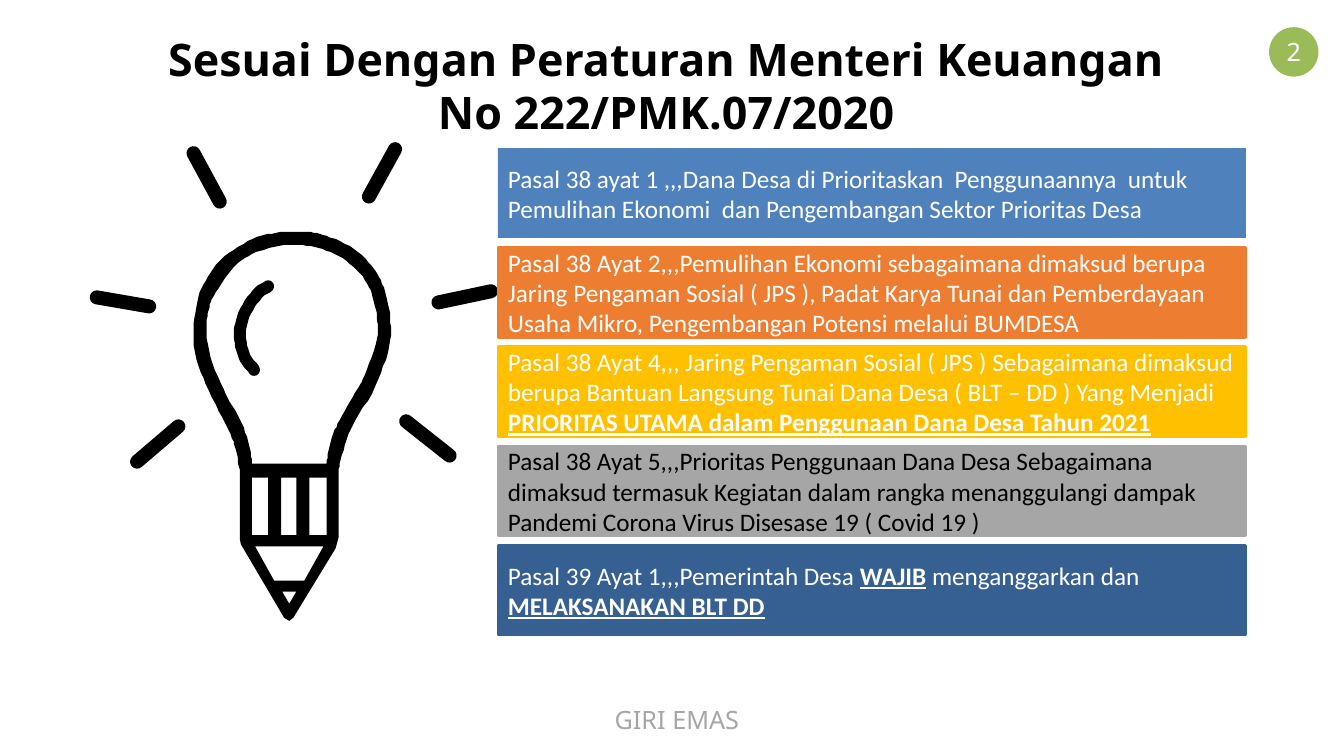
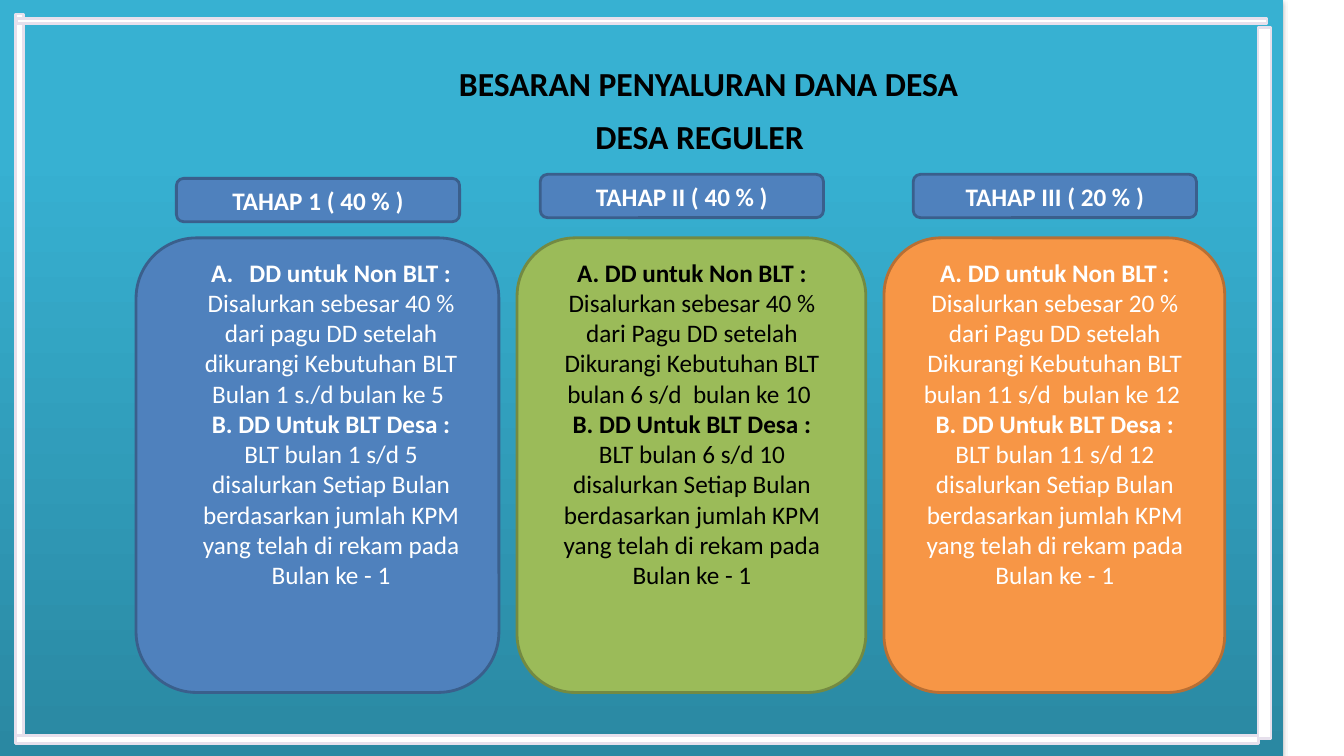
from dataclasses import dataclass

from lxml import etree
from pptx import Presentation
from pptx import util as u
from pptx.dml.color import RGBColor
from pptx.enum import shapes, text
from pptx.oxml import ns

# Shared grid: 160 columns by 90 rows of square cells
CELL = 12192000 / 160
COLUMNS, ROWS = 160, 90
DRAWING_UNIT = 9144  # the bulb is drawn in hundredths of an inch

# Shared fonts and colours
BODY_FONT, HEAD_FONT = "Calibri", "Noto Sans"
WHITE, BLACK, GREY = "FFFFFF", "000000", "A6A6A6"
BLUE, BLUE_EDGE, GREEN = "4F81BD", "3A5F8C", "9BBB59"


@dataclass(frozen=True)
class Area:
    column: float
    row: float
    columns: float
    rows: float


@dataclass(frozen=True)
class Span:
    text: str
    bold: bool = False
    underline: bool = False


@dataclass(frozen=True)
class Style:
    size: float = 18
    font: str = BODY_FONT
    colour: str = WHITE
    align: text.PP_ALIGN = text.PP_ALIGN.CENTER
    anchor: text.MSO_ANCHOR = text.MSO_ANCHOR.TOP
    wrap: bool = True


@dataclass(frozen=True)
class Article:
    fill: str
    edge: str | None
    colour: str
    spans: list[Span]


@dataclass(frozen=True)
class Stage:
    tag: str
    tag_column: float
    tag_row: float
    card_columns: float
    text_column: float
    fill: str
    edge: str
    colour: str
    heading: str
    regular: str
    cash: str
    lettered: bool = False


# Content of the first slide
ARTICLES = [
    Article(BLUE, None, WHITE, [Span(
        "Pasal 38 ayat 1 ,,,Dana Desa di Prioritaskan  Penggunaannya  untuk "
        "Pemulihan Ekonomi  dan Pengembangan Sektor Prioritas Desa")]),
    Article("ED7D31", "ED7D31", WHITE, [Span(
        "Pasal 38 Ayat 2,,,Pemulihan Ekonomi sebagaimana dimaksud berupa Jaring "
        "Pengaman Sosial ( JPS ), Padat Karya Tunai dan Pemberdayaan Usaha Mikro, "
        "Pengembangan Potensi melalui BUMDESA")]),
    Article("FFC000", "FFC000", WHITE, [
        Span("Pasal 38 Ayat 4,,, Jaring Pengaman Sosial ( JPS ) Sebagaimana dimaksud "
             "berupa Bantuan Langsung Tunai Dana Desa ( BLT – DD ) Yang Menjadi "),
        Span("PRIORITAS UTAMA dalam Penggunaan Dana Desa Tahun 2021", True, True)]),
    Article(GREY, GREY, BLACK, [Span(
        "Pasal 38 Ayat 5,,,Prioritas Penggunaan Dana Desa Sebagaimana dimaksud "
        "termasuk Kegiatan dalam rangka menanggulangi dampak Pandemi Corona Virus "
        "Disesase 19 ( Covid 19 )")]),
    Article("376092", "376092", WHITE, [
        Span("Pasal 39 Ayat 1,,,Pemerintah Desa "), Span("WAJIB", True, True),
        Span(" menganggarkan dan "), Span("MELAKSANAKAN BLT DD", True, True)]),
]

# Bulb: smooth glass curves, straight pencil base, windows and rays
GLASS_OUTSIDE = [
    (238, 469), (234, 446), (227, 427), (207, 387), (194, 352), (192, 326), (197, 294),
    (208, 272), (223, 254), (251, 237), (274, 231), (304, 230), (324, 234), (351, 247),
    (372, 268), (382, 289), (387, 315), (386, 344), (372, 384), (349, 424), (338, 456),
    (336, 470)]
GLASS_INSIDE = [
    (250, 458), (246, 437), (236, 412), (224, 391), (209, 355), (205, 328), (207, 308),
    (214, 290), (236, 261), (258, 249), (287, 243), (312, 245), (336, 254), (357, 271),
    (369, 292), (374, 315), (374, 336), (362, 372), (352, 390), (337, 417), (329, 435),
    (324, 457)]
PENCIL = [(336, 533), (333, 544), (291, 613), (287, 616), (282, 613), (239, 540), (238, 535)]
WINDOW_SIDES = [(250, 266), (279, 294), (307, 324)]
PENCIL_WOOD = [(253, 542), (321, 542), (302, 576), (272, 576)]
PENCIL_LEAD = [(280, 587), (294, 587), (287, 599)]
GLEAM = [(266, 284), (255, 292), (242, 312), (238, 333), (242, 352), (252, 367)]
RAYS = [((177, 423), (136, 458)), ((392, 148), (366, 195)), ((192, 152), (218, 200)),
        ((403, 418), (446, 452)), ((487, 289), (435, 300)), ((96, 295), (148, 304))]

# Content of the second slide
STAGES = [
    Stage("TAHAP 1 ( 40 % )", 21, 21.24, 43.2, 22.56, BLUE, BLUE_EDGE, WHITE,
          "DD untuk Non BLT :",
          "Disalurkan sebesar 40 % dari pagu DD setelah dikurangi Kebutuhan BLT "
          "Bulan 1 s./d bulan ke 5 ", "1 s/d 5", lettered=True),
    Stage("TAHAP II ( 40 % )", 64.32, 20.76, 41.52, 65.52, GREEN, "738A42", BLACK,
          "A. DD untuk Non BLT :",
          "Disalurkan sebesar 40 % dari Pagu DD setelah Dikurangi Kebutuhan BLT "
          "bulan 6 s/d  bulan ke 10 ", "6 s/d 10"),
    Stage("TAHAP III ( 20 % )", 108.72, 20.76, 40.56, 108.72, "F79646", "B76F34", WHITE,
          "A. DD untuk Non BLT :",
          "Disalurkan sebesar 20 % dari Pagu DD setelah Dikurangi Kebutuhan BLT "
          "bulan 11 s/d  bulan ke 12 ", "11 s/d 12"),
]
FRAME_BARS = [Area(1.8, 1.68, 0.96, 86.76), Area(1.92, 2.16, 148.92, 0.6),
              Area(1.86, 87.54, 147.96, 0.96), Area(149.76, 3.24, 1.56, 84.72)]


# Drawing helpers
def cells(count: float) -> int:
    return round(count * CELL)


def place(area: Area) -> tuple[int, int, int, int]:
    return cells(area.column), cells(area.row), cells(area.columns), cells(area.rows)


def paint(fill, colour: str) -> None:
    fill.solid()
    fill.fore_color.rgb = RGBColor.from_string(colour)


def write(frame, paragraphs: list[list[Span]], style: Style) -> None:
    frame.auto_size = text.MSO_AUTO_SIZE.NONE
    frame.word_wrap = style.wrap
    frame.vertical_anchor = style.anchor
    for number, spans in enumerate(paragraphs):
        para = frame.add_paragraph() if number else frame.paragraphs[0]
        para.alignment = style.align
        para.space_before = u.Pt(0)
        for span in spans:
            run = para.add_run()
            run.text = span.text
            font = run.font
            font.size, font.name = u.Pt(style.size), style.font
            font.bold, font.underline = span.bold, span.underline
            font.color.rgb = RGBColor.from_string(style.colour)


def set_bullet(para, lettered: bool) -> None:
    properties = para._p.get_or_add_pPr()
    indent = u.Inches(0.38) if lettered else 0
    properties.set("marL", str(indent))
    properties.set("indent", str(-indent))
    if lettered:
        etree.SubElement(properties, ns.qn("a:buFont"), typeface="+mj-lt")
        etree.SubElement(properties, ns.qn("a:buAutoNum"), type="alphaUcPeriod")
    else:
        etree.SubElement(properties, ns.qn("a:buNone"))


def add_box(slide, kind, area: Area, fill: str, edge: str | None = None):
    box = slide.shapes.add_shape(kind, *place(area))
    box.shadow.inherit = False
    paint(box.fill, fill)
    if edge:
        paint(box.line.fill, edge)
        box.line.width = u.Pt(2)
    else:
        box.line.fill.background()
    return box


def fill_placeholder(holder, area: Area, paragraphs: list[list[Span]], style: Style,
                     lettered: bool = False) -> None:
    """Place and fill a template placeholder in front of the shapes drawn so far."""
    holder.left, holder.top, holder.width, holder.height = place(area)
    write(holder.text_frame, paragraphs, style)
    for number, para in enumerate(holder.text_frame.paragraphs):
        set_bullet(para, lettered and number == 0)
    holder.element.getparent().append(holder.element)


def round_stroke(shape, points: float) -> None:
    paint(shape.line.fill, BLACK)
    shape.line.width = u.Pt(points)
    shape.element.spPr.find(ns.qn("a:ln")).set("cap", "rnd")


def smooth(points: list[tuple[int, int]], steps: int = 6) -> list[tuple[float, float]]:
    """Catmull-Rom curve through the points."""
    padded = [points[0], *points, points[-1]]
    curve = []
    for a, b, c, d in zip(padded, padded[1:], padded[2:], padded[3:]):
        for step in range(steps):
            t = step / steps
            curve.append(tuple(
                (2 * q + (r - p) * t + (2 * p - 5 * q + 4 * r - s) * t ** 2
                 + (3 * q - p - 3 * r + s) * t ** 3) / 2
                for p, q, r, s in zip(a, b, c, d)))
    return [*curve, points[-1]]


def add_outline(group, contours: list[list], close: bool = True):
    builder = group.shapes.build_freeform(*contours[0][0], scale=DRAWING_UNIT)
    for number, contour in enumerate(contours):
        if number:
            builder.move_to(*contour[0])
        builder.add_line_segments(contour[1:], close=close)
    outline = builder.convert_to_shape()
    outline.shadow.inherit = False
    return outline


def add_bulb(slide) -> None:
    group = slide.shapes.add_group_shape()
    windows = [[(left, 474), (right, 474), (right, 531), (left, 531)]
               for left, right in WINDOW_SIDES]
    bulb = add_outline(group, [
        smooth(GLASS_OUTSIDE) + PENCIL, smooth(GLASS_INSIDE) + [(324, 460), (250, 460)],
        *windows, PENCIL_WOOD, PENCIL_LEAD])
    paint(bulb.fill, BLACK)
    bulb.line.fill.background()
    gleam = add_outline(group, [smooth(GLEAM)], close=False)
    gleam.fill.background()
    round_stroke(gleam, 8.5)
    for start, end in RAYS:
        ray = group.shapes.add_connector(
            shapes.MSO_CONNECTOR.STRAIGHT, *(value * DRAWING_UNIT for value in start + end))
        round_stroke(ray, 10)
        etree.SubElement(ray.element.spPr, ns.qn("a:effectLst"))


# Slides
def build_articles_slide(deck) -> None:
    slide = deck.slides.add_slide(deck.slide_layouts.get_by_name("Title Only"))
    footer = slide.shapes.add_textbox(*place(Area(6, 83.28, 149.16, 4.8)))
    write(footer.text_frame, [[Span("GIRI EMAS")]], Style(font=HEAD_FONT, colour=GREY))
    badge = add_box(slide, shapes.MSO_SHAPE.OVAL, Area(151.08, 3.24, 5.88, 5.88), GREEN)
    write(badge.text_frame, [[Span("2")]],
          Style(font=HEAD_FONT, anchor=text.MSO_ANCHOR.MIDDLE, wrap=False))
    fill_placeholder(
        slide.shapes.title, Area(15.84, 3.12, 126.96, 14.16),
        [[Span("Sesuai Dengan Peraturan Menteri Keuangan No 222/PMK.07/2020", True)]],
        Style(32, HEAD_FONT, BLACK))
    add_bulb(slide)
    for number, article in enumerate(ARTICLES):
        area = Area(59.28, 17.64 + 11.82 * number, 89.04, 10.68)
        box = add_box(slide, shapes.MSO_SHAPE.RECTANGLE, area, article.fill, article.edge)
        write(box.text_frame, [article.spans],
              Style(colour=article.colour, align=text.PP_ALIGN.LEFT,
                    anchor=text.MSO_ANCHOR.MIDDLE))


def add_backdrop(slide) -> None:
    backdrop = add_box(slide, shapes.MSO_SHAPE.RECTANGLE, Area(0, 0, 152.76, ROWS), BLUE)
    backdrop.fill.gradient()
    backdrop.fill.gradient_angle = 90
    for stop, position, colour in zip(backdrop.fill.gradient_stops, (0, 0.8),
                                      ("2A88A2", "37B1D2")):
        stop.position = position
        stop.color.rgb = RGBColor.from_string(colour)
    effects = backdrop.element.spPr.find(ns.qn("a:effectLst"))
    shadow = etree.SubElement(effects, ns.qn("a:outerShdw"), blurRad=str(u.Pt(3.1)),
                              dist=str(u.Pt(1.8)), dir="5400000", rotWithShape="0")
    colour = etree.SubElement(shadow, ns.qn("a:srgbClr"), val=BLACK)
    etree.SubElement(colour, ns.qn("a:alpha"), val="35000")
    for bar in FRAME_BARS:
        add_box(slide, shapes.MSO_SHAPE.RECTANGLE, bar, WHITE, "E6E0EC")


def build_stages_slide(deck) -> None:
    slide = deck.slides.add_slide(deck.slide_layouts.get_by_name("Comparison"))
    title, subtitle, *bodies = list(slide.placeholders)
    add_backdrop(slide)
    heading = Style(24, colour=BLACK)
    fill_placeholder(title, Area(36.96, 6.84, 94.8, 6),
                     [[Span("BESARAN PENYALURAN DANA DESA", True)]], heading)
    fill_placeholder(subtitle, Area(35.88, 13.2, 94.8, 6),
                     [[Span("DESA REGULER", True)]], heading)
    card_column = 16.2
    for stage, body in zip(STAGES, bodies):
        rounded = shapes.MSO_SHAPE.ROUNDED_RECTANGLE
        add_box(slide, rounded, Area(card_column, 28.32, stage.card_columns, 54.12),
                stage.fill, stage.edge)
        card_column += stage.card_columns + 2.16
        tag = add_box(slide, rounded, Area(stage.tag_column, stage.tag_row, 33.72, 5.16),
                      BLUE, BLUE_EDGE)
        write(tag.text_frame, [[Span(stage.tag, True)]],
              Style(anchor=text.MSO_ANCHOR.MIDDLE))
        cash = (f"BLT bulan {stage.cash} disalurkan Setiap Bulan berdasarkan jumlah KPM "
                "yang telah di rekam pada Bulan ke - 1")
        fill_placeholder(
            body, Area(stage.text_column, 30, 33.72, 44.88),
            [[Span(stage.heading, True)], [Span(stage.regular)],
             [Span("B. DD Untuk BLT Desa :", True)], [Span(cash)]],
            Style(colour=stage.colour), stage.lettered)


def main() -> None:
    deck = Presentation()
    deck.slide_width, deck.slide_height = cells(COLUMNS), cells(ROWS)
    build_articles_slide(deck)
    build_stages_slide(deck)
    deck.save("out.pptx")


if __name__ == "__main__":
    main()
